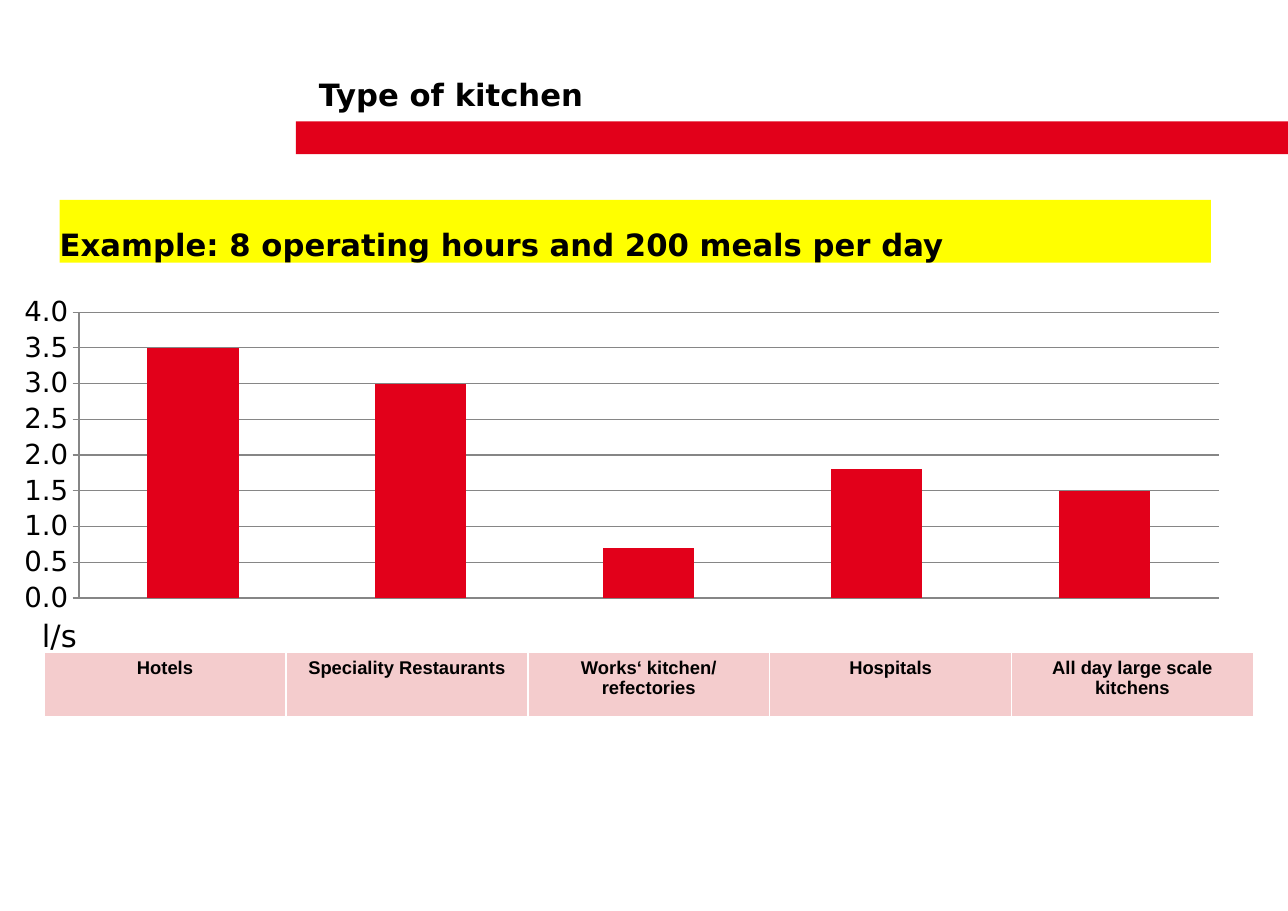
from lxml import etree
from pptx import Presentation
from pptx import util as u
from pptx.chart.data import CategoryChartData
from pptx.dml.color import RGBColor
from pptx.enum import chart as charts, shapes, text
from pptx.oxml import parse_xml
from pptx.oxml.ns import nsdecls, qn

Pt = u.Pt
RED = RGBColor(0xE2, 0x00, 0x1A)
YELLOW = RGBColor(0xFF, 0xFF, 0x00)
PINK = RGBColor(0xF4, 0xCC, 0xCD)
BLACK = RGBColor(0x00, 0x00, 0x00)
GREY = RGBColor(0x86, 0x86, 0x86)
FONT = "DejaVu Sans"

KITCHENS = [
    ("Hotels", 3.5),
    ("Speciality Restaurants", 3.0),
    ("Works‘ kitchen/ refectories", 0.7),
    ("Hospitals", 1.8),
    ("All day large scale kitchens", 1.5),
]
TITLE = ("Type of kitchen", (208, 18, 512.6, 55.4), True)
EXAMPLE = ("Example: 8 operating hours and 200 meals per day", (39, 130.3, 751, 41), True)
UNIT = ("l/s", (27.4, 385.2, 41, 41), False)
RED_BAR = (193, 79.2, 647.24, 21.4)
TABLE_BOX = (28.8, 242.8, 789, 224.6)
ROW_HEIGHTS = (182.4, 42.2)
CHART_BOX = (0, 188.6, 811.4, 216)
PLOT_BOX = (51.6, 203.6, 743.5, 186.4)


def points(box):
    return [Pt(value) for value in box]


def add_rectangle(slide, box, color):
    shape = slide.shapes.add_shape(shapes.MSO_SHAPE.RECTANGLE, *points(box))
    shape.shadow.inherit = False
    shape.fill.solid()
    shape.fill.fore_color.rgb = color
    shape.line.fill.background()
    return shape


def style_font(font, size, bold=False, name=FONT):
    font.name, font.size, font.bold = name, Pt(size), bold
    font.color.rgb = BLACK


def write(shape, wording, bold):
    frame = shape.text_frame
    frame.margin_left = frame.margin_top = frame.margin_right = frame.margin_bottom = 0
    frame.word_wrap = True
    frame.vertical_anchor = text.MSO_ANCHOR.BOTTOM
    frame.text = wording
    paragraph = frame.paragraphs[0]
    paragraph.alignment = text.PP_ALIGN.LEFT
    paragraph.line_spacing = 1.1
    style_font(paragraph.runs[0].font, 20, bold)


def add_label(slide, wording, box, bold):
    write(slide.shapes.add_textbox(*points(box)), wording, bold)


def border_cell(cell):
    properties = cell._tc.get_or_add_tcPr()
    for position, side in enumerate(("lnL", "lnR", "lnT", "lnB")):
        properties.insert(position, parse_xml(
            f'<a:{side} {nsdecls("a")} w="{Pt(1)}"><a:solidFill>'
            f'<a:srgbClr val="FFFFFF"/></a:solidFill></a:{side}>'))


def add_kitchen_table(slide):
    table = slide.shapes.add_table(2, len(KITCHENS), *points(TABLE_BOX)).table
    table.first_row = table.horz_banding = False
    for row, height in zip(table.rows, ROW_HEIGHTS):
        row.height = Pt(height)
    for column, (name, _) in enumerate(KITCHENS):
        table.columns[column].width = Pt(TABLE_BOX[2] / len(KITCHENS))
        empty, label = table.cell(0, column), table.cell(1, column)
        empty.fill.background()
        label.fill.solid()
        label.fill.fore_color.rgb = PINK
        label.text = name
        paragraph = label.text_frame.paragraphs[0]
        paragraph.alignment = text.PP_ALIGN.CENTER
        style_font(paragraph.runs[0].font, 12, True, "Arial")
        border_cell(empty)
        border_cell(label)


def place_plot(chart):
    left, top, width, height = CHART_BOX
    plot_left, plot_top, plot_width, plot_height = PLOT_BOX
    fractions = {"x": (plot_left - left) / width, "y": (plot_top - top) / height,
                 "w": plot_width / width, "h": plot_height / height}
    plot_area = chart._chartSpace.chart.plotArea
    for previous in plot_area.findall(qn("c:layout")):
        plot_area.remove(previous)
    layout = etree.Element(qn("c:layout"))
    manual = etree.SubElement(layout, qn("c:manualLayout"))
    settings = {"layoutTarget": "inner", "xMode": "edge", "yMode": "edge"}
    settings.update((key, f"{value:.4f}") for key, value in fractions.items())
    for key, value in settings.items():
        etree.SubElement(manual, qn(f"c:{key}")).set("val", value)
    plot_area.insert(0, layout)


def add_flow_chart(slide):
    data = CategoryChartData(number_format="0.0")
    data.categories = [str(number) for number in range(1, len(KITCHENS) + 1)]
    data.add_series("Series 1", [flow for _, flow in KITCHENS])
    chart = slide.shapes.add_chart(
        charts.XL_CHART_TYPE.COLUMN_CLUSTERED, *points(CHART_BOX), data).chart
    chart.has_title = chart.has_legend = False
    style_font(chart.font, 10)
    chart.category_axis.visible = False
    axis = chart.value_axis
    axis.minimum_scale, axis.maximum_scale, axis.major_unit = 0, 4, 0.5
    axis.major_tick_mark = charts.XL_TICK_MARK.OUTSIDE
    axis.tick_labels.number_format = "0.0"
    axis.tick_labels.number_format_is_linked = False
    style_font(axis.tick_labels.font, 18)
    axis.has_major_gridlines = True
    for line in (axis.format.line, axis.major_gridlines.format.line):
        line.color.rgb = GREY
        line.width = Pt(0.75)
    plot = chart.plots[0]
    plot.gap_width = 150
    plot.vary_by_categories = False
    fill = plot.series[0].format.fill
    fill.solid()
    fill.fore_color.rgb = RED
    place_plot(chart)


def main():
    presentation = Presentation()
    presentation.slide_width, presentation.slide_height = Pt(840.24), Pt(594)
    slide = presentation.slides.add_slide(presentation.slide_layouts[6])
    add_rectangle(slide, RED_BAR, RED)
    add_label(slide, *TITLE)
    wording, box, bold = EXAMPLE
    write(add_rectangle(slide, box, YELLOW), wording, bold)
    add_kitchen_table(slide)
    add_flow_chart(slide)
    add_label(slide, *UNIT)
    presentation.save("out.pptx")


if __name__ == "__main__":
    main()
